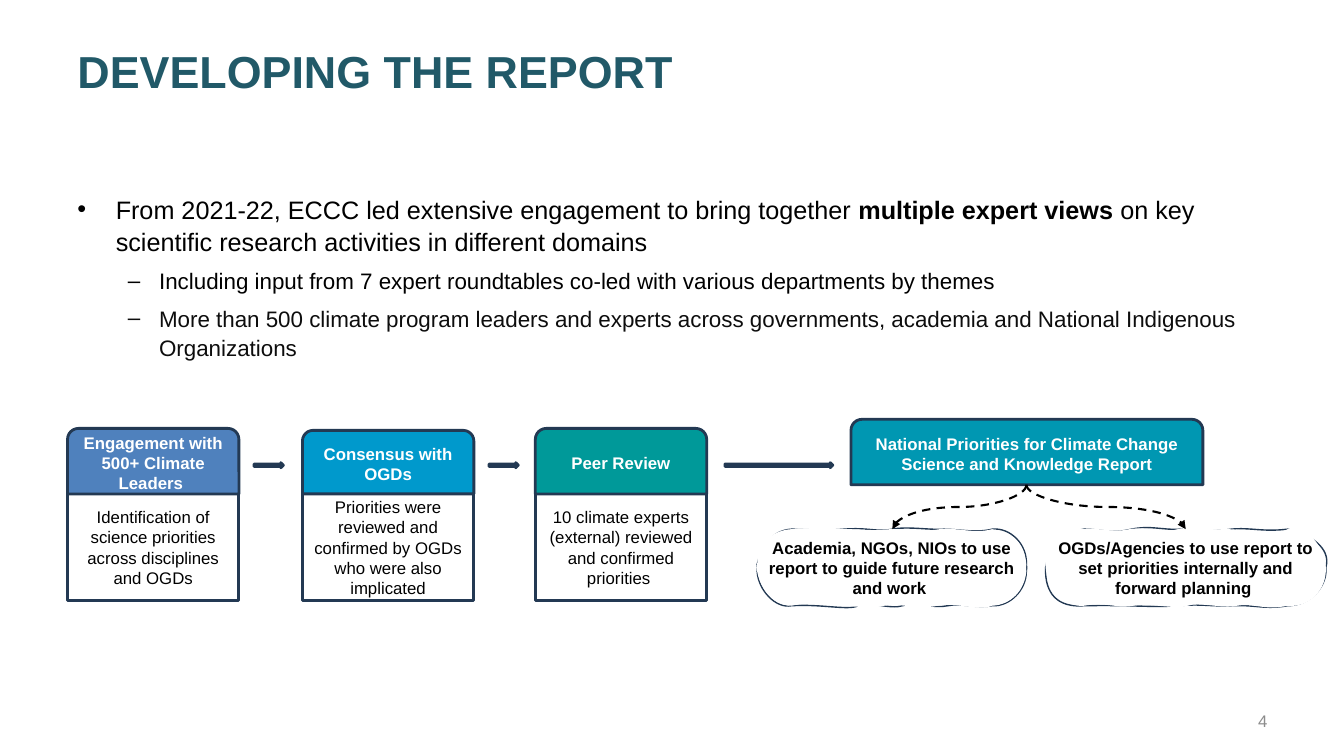
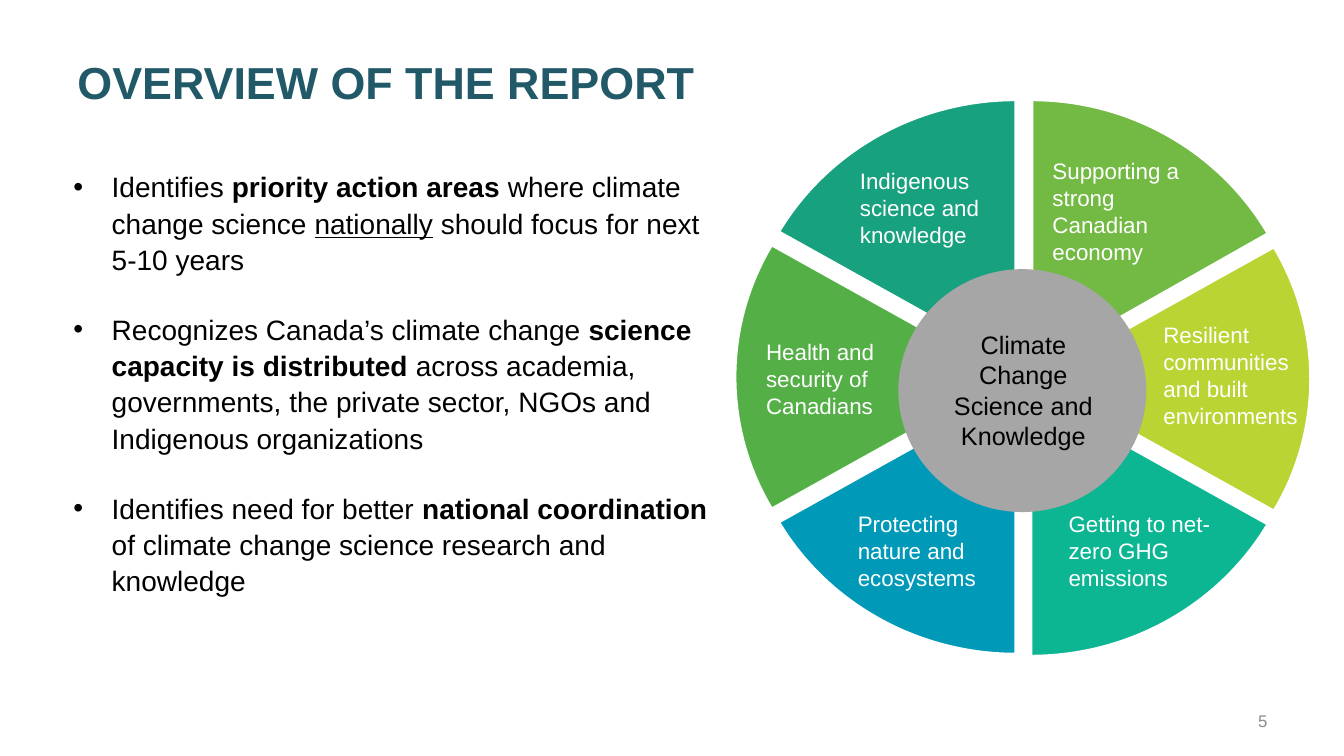
from math import cos, radians, sin, tan

from lxml.etree import SubElement
from pptx import Presentation
from pptx.dml.color import RGBColor
from pptx.enum.dml import MSO_LINE
from pptx.enum.shapes import MSO_CONNECTOR, MSO_SHAPE
from pptx.enum.text import MSO_ANCHOR, PP_ALIGN
from pptx.oxml.ns import qn
from pptx.util import Inches, Pt

COLORS = {
    "title": "215968", "text": "000000", "soft": "0D0D0D", "number": "8C8C8C",
    "white": "FFFFFF", "outline": "233953", "hub": "A6A6A6",
    "engagement": "4F81BD", "consensus": "0099CC", "review": "009999",
    "report": "0097B2", "economy": "73BA44", "communities": "B9D433",
    "emissions": "0DB693", "nature": "0099B8", "health": "54AF47",
    "indigenous": "18A17E",
}
FONT = "Arial"

# Each path: a start point, then rows of two control points and an end.
ACADEMIA_OUTLINE = [
    (7.51, 5.6),
    (7.55, 5.44, 7.65, 5.26, 7.85, 5.25), (8.01, 5.25, 8.13, 5.27, 8.37, 5.25),
    (8.61, 5.23, 8.69, 5.28, 8.85, 5.25), (9, 5.22, 9.22, 5.26, 9.36, 5.25),
    (9.51, 5.25, 9.68, 5.29, 9.84, 5.25), (10.02, 5.23, 10.19, 5.4, 10.18, 5.6),
    (10.19, 5.62, 10.18, 5.64, 10.18, 5.67), (10.18, 5.85, 10.02, 6.02, 9.84, 6.01),
    (9.67, 6.04, 9.54, 5.98, 9.4, 6.01), (9.27, 6.04, 9.06, 5.97, 8.95, 6.01),
    (8.84, 6.05, 8.6, 5.96, 8.51, 6.01), (8.42, 6.06, 8.14, 5.99, 7.85, 6.01),
    (7.69, 6.04, 7.52, 5.85, 7.51, 5.67), (7.51, 5.64, 7.52, 5.62, 7.51, 5.6),
]
ACADEMIA_FILL = [
    (7.51, 5.6),
    (7.52, 5.38, 7.67, 5.26, 7.85, 5.25), (7.96, 5.23, 8.14, 5.25, 8.37, 5.25),
    (8.6, 5.25, 8.62, 5.27, 8.83, 5.25), (9.04, 5.24, 9.15, 5.28, 9.32, 5.25),
    (9.5, 5.23, 9.66, 5.3, 9.84, 5.25), (10.04, 5.28, 10.16, 5.38, 10.18, 5.6),
    (10.18, 5.62, 10.17, 5.65, 10.18, 5.67), (10.16, 5.86, 10.03, 6, 9.84, 6.01),
    (9.7, 6.07, 9.49, 5.97, 9.3, 6.01), (9.12, 6.05, 8.9, 5.98, 8.77, 6.01),
    (8.64, 6.04, 8.43, 6.01, 8.31, 6.01), (8.19, 6.01, 8.02, 5.97, 7.85, 6.01),
    (7.66, 6.01, 7.54, 5.83, 7.51, 5.67), (7.51, 5.65, 7.51, 5.63, 7.51, 5.6),
]
AGENCIES_OUTLINE = [
    (10.37, 5.63),
    (10.42, 5.4, 10.5, 5.29, 10.75, 5.25), (10.93, 5.25, 11.02, 5.3, 11.22, 5.25),
    (11.42, 5.21, 11.52, 5.26, 11.7, 5.25), (11.88, 5.25, 12.02, 5.28, 12.21, 5.25),
    (12.4, 5.23, 12.52, 5.28, 12.77, 5.25), (12.97, 5.29, 13.21, 5.43, 13.15, 5.63),
    (13.17, 5.81, 13, 6.01, 12.77, 6.01), (12.55, 6.05, 12.45, 6, 12.23, 6.01),
    (12.01, 6.02, 11.93, 5.99, 11.68, 6.01), (11.43, 6.03, 11.21, 6, 10.75, 6.01),
    (10.49, 6.03, 10.36, 5.89, 10.37, 5.63),
]
AGENCIES_FILL = [
    (10.37, 5.63),
    (10.35, 5.45, 10.53, 5.2, 10.75, 5.25), (10.89, 5.23, 11.03, 5.29, 11.2, 5.25),
    (11.37, 5.22, 11.58, 5.29, 11.68, 5.25), (11.78, 5.22, 11.97, 5.26, 12.13, 5.25),
    (12.29, 5.24, 12.64, 5.33, 12.77, 5.25), (12.95, 5.2, 13.14, 5.42, 13.15, 5.63),
    (13.16, 5.87, 12.97, 6.03, 12.77, 6.01), (12.54, 6.06, 12.43, 5.98, 12.27, 6.01),
    (12.11, 6.04, 11.9, 5.97, 11.78, 6.01), (11.67, 6.05, 11.39, 5.98, 11.24, 6.01),
    (11.08, 6.04, 10.98, 5.97, 10.75, 6.01), (10.56, 6.03, 10.39, 5.84, 10.37, 5.63),
]


def rgb(name):
    return RGBColor.from_string(COLORS[name])


def write(paragraph, text, size=12, color="text", bold=False, underline=False, align=None):
    run = paragraph.add_run()
    run.text = text
    run.font.name, run.font.size = FONT, Pt(size)
    run.font.bold, run.font.underline = bold, underline
    run.font.color.rgb = rgb(color)
    if align is not None:
        paragraph.alignment = align


class Deck:
    def __init__(self):
        self.presentation = Presentation()
        self.presentation.slide_width = Inches(13.33)
        self.presentation.slide_height = Inches(7.5)
        self.shapes = None

    def start_slide(self, title, number, title_height):
        slide = self.presentation.slides.add_slide(self.presentation.slide_layouts[6])
        self.shapes = slide.shapes
        self.label((0.67, 0.3, 12, title_height), title, anchor=MSO_ANCHOR.MIDDLE,
                   size=32, color="title", bold=True)
        self.label((9.56, 6.95, 3.11, 0.4), str(number), anchor=MSO_ANCHOR.MIDDLE,
                   color="number", align=PP_ALIGN.RIGHT)

    def frame(self, box, anchor=MSO_ANCHOR.TOP):
        frame = self.shapes.add_textbox(*map(Inches, box)).text_frame
        frame.word_wrap, frame.vertical_anchor = True, anchor
        return frame

    def label(self, box, text, anchor=MSO_ANCHOR.TOP, **style):
        write(self.frame(box, anchor).paragraphs[0], text, **style)

    def bullets(self, box, items):
        """Each item is (level, size, space after, color, runs); a run is (text, format)."""
        frame = self.frame(box)
        for index, (level, size, after, color, runs) in enumerate(items):
            paragraph = frame.add_paragraph() if index else frame.paragraphs[0]
            left, hang, mark = ((0.38, 0.38, "•"), (0.81, 0.31, "–"))[level]
            paragraph.level = level
            paragraph.line_spacing, paragraph.space_after = 1.08, Pt(after)
            properties = paragraph._p.get_or_add_pPr()
            properties.set("marL", str(Inches(left)))
            properties.set("indent", str(-Inches(hang)))
            SubElement(properties, qn("a:buFont")).set("typeface", FONT)
            SubElement(properties, qn("a:buChar")).set("char", mark)
            for text, style in runs:
                write(paragraph, text, size=size, color=color, **style)

    def paint(self, shape, fill=None, line=None, width=2.0):
        shape.shadow.inherit = False
        if fill:
            shape.fill.solid()
            shape.fill.fore_color.rgb = rgb(fill)
        else:
            shape.fill.background()
        if line:
            shape.line.color.rgb = rgb(line)
            shape.line.width = Pt(width)
        else:
            shape.line.fill.background()

    def centre_text(self, shape, text, **style):
        shape.text_frame.word_wrap = True
        shape.text_frame.vertical_anchor = MSO_ANCHOR.MIDDLE
        write(shape.text_frame.paragraphs[0], text, align=PP_ALIGN.CENTER, **style)

    def block(self, kind, box, text="", fill=None, line="outline", **style):
        shape = self.shapes.add_shape(kind, *map(Inches, box))
        self.paint(shape, fill, line)
        if text:
            self.centre_text(shape, text, **style)

    def heading(self, box, text, fill):
        self.block(MSO_SHAPE.ROUND_2_SAME_RECTANGLE, box, text, fill,
                   color="white", bold=True)

    def curved(self, box, paths, **paint):
        """Freeform filling box; each path is (rows, attributes), rows of 2 or 6 numbers."""
        left, top, width, height = map(Inches, box)
        builder = self.shapes.build_freeform(left, top)
        builder.add_line_segments([(left + width, top), (left + width, top + height),
                                   (left, top + height)])
        shape = builder.convert_to_shape()
        path_list = shape._element.spPr.find(qn("a:custGeom")).find(qn("a:pathLst"))
        path_list.remove(path_list[0])
        for rows, attributes in paths:
            path = SubElement(path_list, qn("a:path"), w=str(width), h=str(height),
                              **attributes)
            for index, row in enumerate(rows):
                kind = "cubicBezTo" if len(row) == 6 else "lnTo" if index else "moveTo"
                command = SubElement(path, qn("a:" + kind))
                for x, y in zip(row[::2], row[1::2]):
                    SubElement(command, qn("a:pt"), x=str(Inches(x) - left),
                               y=str(Inches(y) - top))
            SubElement(path, qn("a:close"))
        self.paint(shape, **paint)
        return shape

    def bubble(self, box, edge, inside, text):
        """A sketched outline, partly covered by a slightly different white area."""
        shape = self.curved(box, [(edge, {"fill": "none"}), (inside, {"stroke": "0"})],
                            fill="white", line="outline", width=1)
        self.centre_text(shape, text, bold=True)

    def wedge(self, box, start, fill, sweep=60):
        """One slice of the ellipse that fills box, clockwise from start degrees."""
        left, top, width, height = box
        pull = 4 / 3 * tan(radians(sweep / 4))

        def place(x, y):
            return left + width / 2 * (1 + x), top + height / 2 * (1 + y)

        a, b = radians(start), radians(start + sweep)
        first, last = place(cos(a), sin(a)), place(cos(b), sin(b))
        leave = place(cos(a) - pull * sin(a), sin(a) + pull * cos(a))
        arrive = place(cos(b) + pull * sin(b), sin(b) - pull * cos(b))
        rows = [first, (*leave, *arrive, *last), place(0, 0), first]
        self.curved(box, [(rows, {})], fill=fill, line="white")

    def drop_arrow(self, begin, end):
        """A dashed curve that leaves and arrives vertically: a turned connector."""
        (x1, y1), (x2, y2) = begin, end
        centre_x, centre_y = (x1 + x2) / 2, (y1 + y2) / 2
        to_left = x2 < x1
        half_x = (y2 - y1) / 2 * (1 if to_left else -1)
        half_y = abs(x2 - x1) / 2
        arrow = self.shapes.add_connector(
            MSO_CONNECTOR.CURVE, *map(Inches, (centre_x - half_x, centre_y - half_y,
                                               centre_x + half_x, centre_y + half_y)))
        arrow.line.color.rgb = rgb("text")
        arrow.line.width, arrow.line.dash_style = Pt(1.5), MSO_LINE.DASH
        properties = arrow._element.spPr
        properties.find(qn("a:xfrm")).set("rot", str((90 if to_left else 270) * 60000))
        SubElement(properties.find(qn("a:ln")), qn("a:tailEnd")).set("type", "triangle")
        SubElement(properties, qn("a:effectLst"))


def build_development(deck):
    deck.start_slide("DEVELOPING THE REPORT", 4, title_height=0.8)
    deck.bullets((0.67, 1.85, 12, 2.01), [
        (0, 18, 6, "text", [
            ("From 2021-22, ECCC led extensive engagement to bring together ", {}),
            ("multiple expert views ", {"bold": True}),
            ("on key scientific research activities in different domains", {})]),
        (1, 16, 6, "text", [
            ("Including input from 7 expert roundtables co-led with various "
             "departments by themes", {})]),
        (1, 16, 18, "soft", [
            ("More than 500 climate program leaders and experts across governments, "
             "academia and National Indigenous Organizations", {})]),
    ])
    stages = [
        (0.67, 4.25, "Engagement with 500+ Climate Leaders ", "engagement",
         "Identification of science priorities across disciplines and OGDs"),
        (3, 4.27, "Consensus with OGDs", "consensus",
         "Priorities were reviewed and confirmed by OGDs who were also implicated"),
        (5.31, 4.25, "Peer Review", "review",
         "10 climate experts (external) reviewed and confirmed priorities "),
    ]
    for left, top, name, color, detail in stages:
        deck.block(MSO_SHAPE.RECTANGLE, (left, 4.9, 1.7, 1.06), detail)
        deck.heading((left, top, 1.7, 4.9 - top), name, color)
    deck.heading((8.44, 4.16, 3.49, 0.65),
                 "National Priorities for Climate Change Science and Knowledge Report",
                 "report")
    deck.bubble((7.51, 5.25, 2.67, 0.76), ACADEMIA_OUTLINE, ACADEMIA_FILL,
                "Academia, NGOs, NIOs to use report to guide future research and work ")
    deck.bubble((10.37, 5.25, 2.78, 0.76), AGENCIES_OUTLINE, AGENCIES_FILL,
                "OGDs/Agencies to use report to set priorities internally and "
                "forward planning ")
    for left, length in ((2.52, 0.29), (4.85, 0.29), (7.19, 1.07)):
        deck.block(MSO_SHAPE.RIGHT_ARROW, (left, 4.59, length, 0.05), fill="engagement")
    for target in (8.85, 11.76):
        deck.drop_arrow((10.18, 4.81), (target, 5.25))


def build_overview(deck):
    deck.start_slide("OVERVIEW OF THE REPORT", 5, title_height=1.01)
    points = [
        [("Identifies ", {}), ("priority action areas ", {"bold": True}),
         ("where climate change science ", {}), ("nationally", {"underline": True}),
         (" should focus for next 5-10 years", {})],
        [("Recognizes Canada’s climate change ", {}),
         ("science capacity is distributed", {"bold": True}),
         (" across academia, governments, the private sector, NGOs and "
          "Indigenous organizations", {})],
        [("Identifies need for better ", {}), ("national coordination ", {"bold": True}),
         ("of climate change science research and knowledge", {})],
    ]
    deck.bullets((0.63, 1.61, 6.6, 4.92), [(0, 20, 24, "text", runs) for runs in points])
    themes = [
        ("economy", (7.53, 0.99, 5.41, 5.31), (10.34, 1.51, 1.68, 1.14),
         "Supporting a strong Canadian economy"),
        ("communities", (7.57, 1.14, 5.43, 5.24), (11.44, 3.14, 1.76, 1.14),
         "Resilient communities and built environments"),
        ("emissions", (7.51, 1.27, 5.43, 5.24), (10.5, 5.01, 1.76, 0.88),
         "Getting to net-zero GHG emissions"),
        ("nature", (7.36, 1.25, 5.43, 5.24), (8.41, 5.01, 1.76, 0.88),
         "Protecting nature and ecosystems"),
        ("health", (7.29, 1.12, 5.43, 5.24), (7.5, 3.31, 1.76, 0.88),
         "Health and security of Canadians"),
        ("indigenous", (7.36, 0.99, 5.43, 5.24), (8.43, 1.61, 1.71, 0.88),
         "Indigenous science and knowledge"),
    ]
    for index, (color, ellipse, _, _) in enumerate(themes):
        deck.wedge(ellipse, -90 + 60 * index, color)
    deck.block(MSO_SHAPE.OVAL, (8.91, 2.67, 2.46, 2.41), fill="hub", line=None)
    for _, _, box, name in themes:
        deck.label(box, name, size=16, color="white")
    deck.label((9.27, 3.22, 1.76, 1.27), "Climate Change Science and Knowledge",
               size=18, align=PP_ALIGN.CENTER)


def main():
    deck = Deck()
    build_development(deck)
    build_overview(deck)
    deck.presentation.save("out.pptx")


if __name__ == "__main__":
    main()
